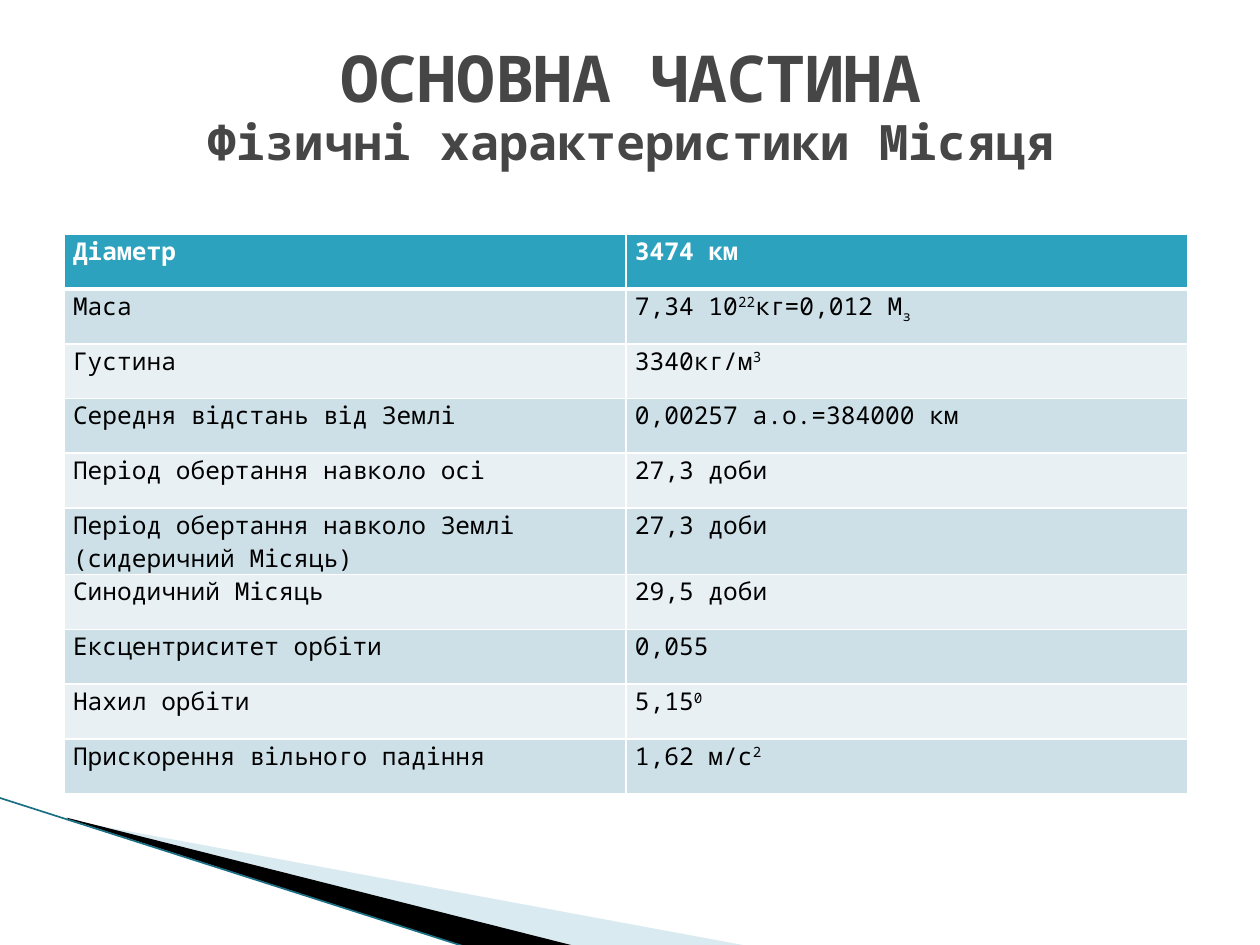
from dataclasses import dataclass

from lxml import etree
from pptx import Presentation
from pptx import util as u
from pptx.dml.color import RGBColor
from pptx.enum import shapes, text
from pptx.oxml.ns import qn


@dataclass(frozen=True)
class Theme:
    font: str = "Noto Sans Mono"
    title: str = "464646"
    body: str = "000000"
    white: str = "FFFFFF"
    header: str = "2DA2BF"
    bands: tuple = ("CDE0E8", "E8F0F4")
    wedge: str = "A0CBDC"
    edge: str = "1B6F85"
    title_size: float = 36.9
    subtitle_size: float = 27.9
    table_size: float = 14


class SlideBuilder:
    def __init__(self, slide, theme):
        self.slide = slide
        self.theme = theme

    def style(self, font, size, color, bold=False):
        font.name = self.theme.font
        font.size = u.Pt(size)
        font.bold = bold
        font.color.rgb = RGBColor.from_string(color)

    def polygon(self, points, color, opacity=100):
        corners = [(u.Inches(x), u.Inches(y)) for x, y in points]
        builder = self.slide.shapes.build_freeform(*corners[0])
        builder.add_line_segments(corners[1:], close=True)
        shape = builder.convert_to_shape()
        shape.shadow.inherit = False
        shape.line.fill.background()
        shape.fill.solid()
        shape.fill.fore_color.rgb = RGBColor.from_string(color)
        if opacity < 100:
            fill_color = shape.fill._xPr.find(qn("a:solidFill"))[0]
            etree.SubElement(fill_color, qn("a:alpha"), val=str(opacity * 1000))

    def line(self, start, end, color, width):
        connector = self.slide.shapes.add_connector(
            shapes.MSO_CONNECTOR.STRAIGHT, *map(u.Inches, start + end))
        connector.line.color.rgb = RGBColor.from_string(color)
        connector.line.width = u.Pt(width)
        etree.SubElement(connector._element.spPr, qn("a:effectLst"))

    def heading(self, title, subtitle, box):
        shape = self.slide.shapes.add_textbox(*map(u.Inches, box))
        frame = shape.text_frame
        frame.word_wrap = True
        frame.vertical_anchor = text.MSO_ANCHOR.MIDDLE
        frame.margin_top = 0
        frame.margin_bottom = u.Inches(0.58)
        paragraph = frame.paragraphs[0]
        paragraph.alignment = text.PP_ALIGN.CENTER
        paragraph.line_spacing = 0.93
        self.style(paragraph.font, self.theme.title_size, self.theme.title, True)
        paragraph.add_run().text = title
        paragraph.add_line_break()
        run = paragraph.add_run()
        run.text = subtitle
        run.font.size = u.Pt(self.theme.subtitle_size)

    def borders(self, cell, top, bottom):
        properties = cell._tc.get_or_add_tcPr()
        widths = {"a:lnL": 1, "a:lnR": 1, "a:lnT": top, "a:lnB": bottom}
        for index, (tag, width) in enumerate(widths.items()):
            border = etree.Element(qn(tag), w=str(u.Pt(width)))
            fill = etree.SubElement(border, qn("a:solidFill"))
            etree.SubElement(fill, qn("a:srgbClr"), val=self.theme.white)
            properties.insert(index, border)

    def cell(self, cell, content, row):
        is_header = row == 0
        cell.fill.solid()
        cell.fill.fore_color.rgb = RGBColor.from_string(
            self.theme.header if is_header else self.theme.bands[(row - 1) % 2])
        self.borders(cell, 3 if row == 1 else 1, 3 if is_header else 1)
        cell.margin_left = cell.margin_right = u.Inches(0.07)
        cell.margin_top = cell.margin_bottom = 0
        paragraph = cell.text_frame.paragraphs[0]
        color = self.theme.white if is_header else self.theme.body
        self.style(paragraph.font, self.theme.table_size, color, is_header)
        # A part is plain text or a (text, baseline percent) pair
        for part in [content] if isinstance(content, str) else content:
            words, baseline = (part, 0) if isinstance(part, str) else part
            run = paragraph.add_run()
            run.text = words
            if baseline:
                run.font._element.set("baseline", str(baseline * 1000))

    def table(self, rows, box, tall_row, tall_height):
        frame = self.slide.shapes.add_table(
            len(rows), len(rows[0]), *map(u.Inches, box))
        table = frame.table
        row_height = (box[3] - tall_height) / (len(rows) - 1)
        for column in table.columns:
            column.width = u.Inches(box[2] / len(rows[0]))
        for row, contents in enumerate(rows):
            height = tall_height if row == tall_row else row_height
            table.rows[row].height = u.Inches(height)
            for column, content in enumerate(contents):
                self.cell(table.cell(row, column), content, row)


MOON_FACTS = [
    ("Діаметр", "3474 км"),
    ("Маса", ["7,34 10", ("22", 30), "кг=0,012 М", ("з", -25)]),
    ("Густина", ["3340кг/м", ("3", 30)]),
    ("Середня відстань від Землі", "0,00257 а.о.=384000 км"),
    ("Період обертання навколо осі", "27,3 доби"),
    ("Період обертання навколо Землі (сидеричний Місяць)", "27,3 доби"),
    ("Синодичний Місяць", "29,5 доби"),
    ("Ексцентриситет орбіти", "0,055"),
    ("Нахил орбіти", ["5,15", ("0", 30)]),
    ("Прискорення вільного падіння", ["1,62 м/с", ("2", 30)]),
]


def main():
    presentation = Presentation()
    presentation.slide_width = u.Inches(10)
    presentation.slide_height = u.Inches(7.5)
    theme = Theme()
    builder = SlideBuilder(
        presentation.slides.add_slide(presentation.slide_layouts[6]), theme)

    # Corner wedges
    builder.polygon([(0.55, 6.51), (5.95, 7.51), (4.56, 7.51), (0.55, 6.5)],
                    theme.wedge, opacity=40)
    builder.polygon([(0.53, 6.49), (4.57, 7.51), (3.72, 7.52), (0.54, 6.5)],
                    theme.body)
    builder.line((-0.01, 6.33), (3.71, 7.52), theme.edge, 0.95)

    # Title
    builder.heading("ОСНОВНА ЧАСТИНА", "Фізичні характеристики Місяця",
                    (0.51, 0.52, 9, 1.25))

    # Physical characteristics
    builder.table(MOON_FACTS, (0.51, 1.86, 8.92, 4.44),
                  tall_row=5, tall_height=0.53)

    presentation.save("out.pptx")


if __name__ == "__main__":
    main()
